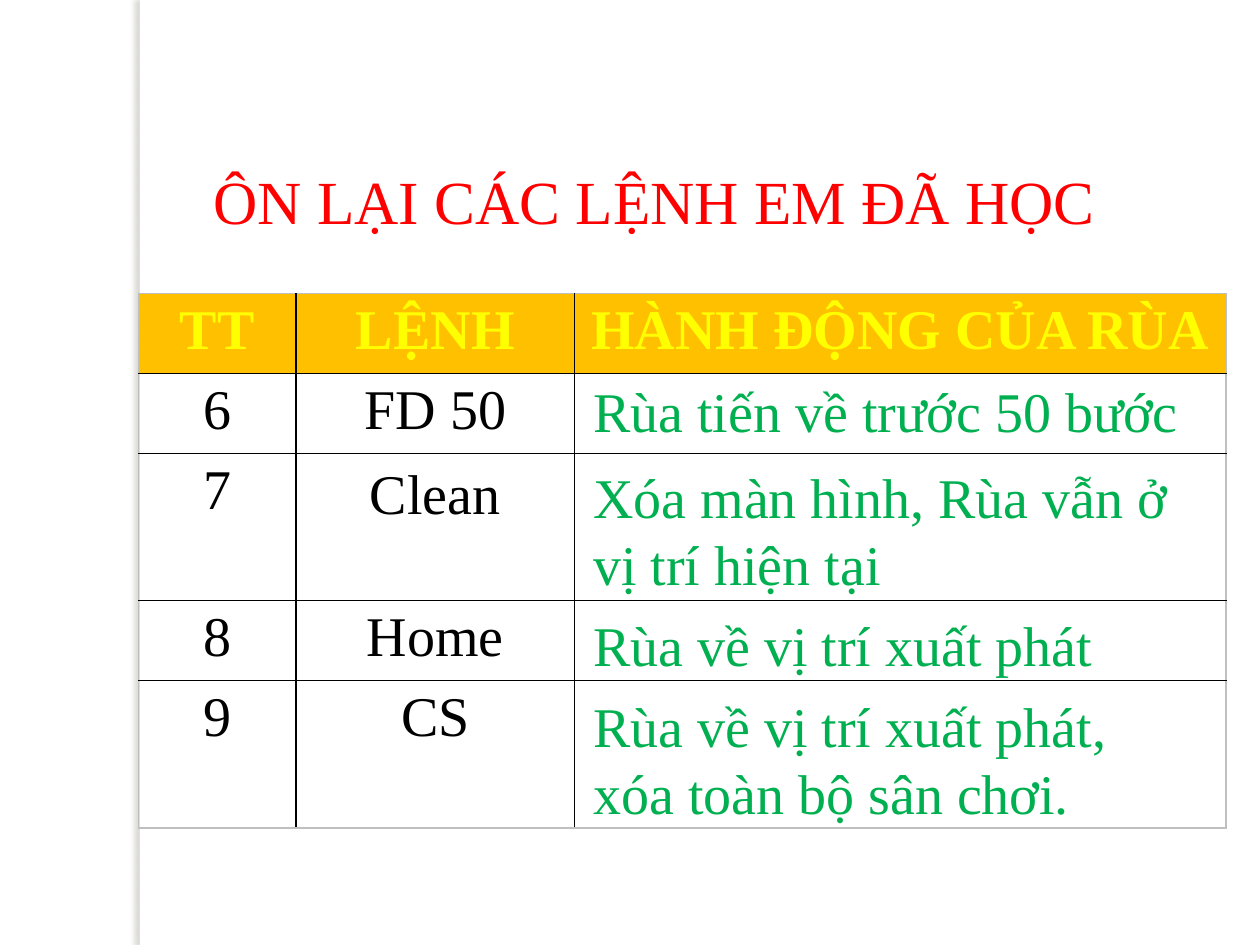
from lxml import etree
from pptx import Presentation
from pptx import util as u
from pptx.dml.color import RGBColor
from pptx.enum import shapes, text
from pptx.oxml import parse_xml
from pptx.oxml.ns import qn

FONT = "Times New Roman"
COLORS = {"paper": "FFFFFF", "title": "FF0000", "header": "FFC000", "header_text": "FFFF00",
          "ink": "000000", "action": "00B050", "frame": "BFBFBF", "shadow": "736F63"}
COLUMNS = [1.25, 2.21, 5.17]
ROWS = [0.63, 0.63, 1.17, 0.63, 1.17]
TABLE_LEFT, TABLE_TOP = 1.1, 2.33
COMMANDS = [("TT", "LỆNH", "HÀNH ĐỘNG CỦA RÙA"),
            ("6", "FD 50"), ("7", "Clean"), ("8", "Home"), ("9", "CS")]
# Action text, top and height of its box
ACTIONS = [("Rùa tiến về trước 50 bước", 2.94, 0.64),
           ("Xóa màn hình, Rùa vẫn ở vị trí hiện tại", 3.62, 1.18),
           ("Rùa về vị trí xuất phát", 4.8, 0.64),
           ("Rùa về vị trí xuất phát, xóa toàn bộ sân chơi.", 5.44, 1.18)]


def rgb(name):
    return RGBColor.from_string(COLORS[name])


def write(frame, words, size, color, align, bold=False):
    frame.text = words
    paragraph = frame.paragraphs[0]
    paragraph.alignment = align
    font = paragraph.runs[0].font
    font.name, font.size, font.bold = FONT, u.Pt(size), bold
    font.color.rgb = rgb(color)


def add_label(slide, words, box, size, color, align):
    label = slide.shapes.add_textbox(*map(u.Inches, box)).text_frame
    label.word_wrap = True
    write(label, words, size, color, align)


def add_side_strip(slide, width, height):
    strip = slide.shapes.add_shape(shapes.MSO_SHAPE.RECTANGLE, int(width * 0.111), 0,
                                   int(width * 0.008), height)
    strip.fill.solid()
    strip.fill.fore_color.rgb = rgb("paper")
    strip.line.fill.background()
    strip.shadow.inherit = False
    glow = strip.element.spPr.find(qn("a:effectLst"))
    glow.append(parse_xml(
        '<a:outerShdw xmlns:a="http://schemas.openxmlformats.org/drawingml/2006/main" '
        'blurRad="38100" dist="38100" dir="10800000" algn="tl" rotWithShape="0">'
        f'<a:srgbClr val="{COLORS["shadow"]}"><a:alpha val="25000"/></a:srgbClr></a:outerShdw>'))


def set_border(cell, side, color, width):
    line = etree.SubElement(cell._tc.get_or_add_tcPr(), qn(f"a:ln{side}"), w=str(u.Pt(width)))
    fill = etree.SubElement(line, qn("a:solidFill"))
    etree.SubElement(fill, qn("a:srgbClr"), val=COLORS[color])


def style_cell(cell, row, column):
    # Grey frame outside, black rules inside
    outer = {"L": column == 0, "R": column == len(COLUMNS) - 1,
             "T": row == 0, "B": row == len(ROWS) - 1}
    for side, is_outer in outer.items():
        set_border(cell, side, "frame" if is_outer else "ink", 1)
    if row == 0:
        cell.fill.solid()
        cell.fill.fore_color.rgb = rgb("header")
    else:
        cell.fill.background()


def add_command_table(slide):
    table = slide.shapes.add_table(
        len(ROWS), len(COLUMNS), u.Inches(TABLE_LEFT), u.Inches(TABLE_TOP),
        u.Inches(sum(COLUMNS)), u.Inches(sum(ROWS))).table
    for column, width in zip(table.columns, COLUMNS):
        column.width = u.Inches(width)
    for row, height in zip(table.rows, ROWS):
        row.height = u.Inches(height)
    for r in range(len(ROWS)):
        for c in range(len(COLUMNS)):
            style_cell(table.cell(r, c), r, c)
        for c, words in enumerate(COMMANDS[r]):
            write(table.cell(r, c).text_frame, words, 32, "ink" if r else "header_text",
                  text.PP_ALIGN.CENTER, bold=r == 0)
    # "Clean" sits slightly lower than its row number
    table.cell(2, 1).margin_top = u.Inches(0.09)


def main():
    deck = Presentation()
    deck.slide_width, deck.slide_height = u.Inches(10), u.Inches(7.5)
    slide = deck.slides.add_slide(deck.slide_layouts[6])
    add_side_strip(slide, deck.slide_width, deck.slide_height)
    # Title
    add_label(slide, "ÔN LẠI CÁC LỆNH EM ĐÃ HỌC", (1.17, 1.25, 8.05, 0.69), 35, "title",
              text.PP_ALIGN.CENTER)
    add_command_table(slide)
    # What the turtle does, over the last column
    for words, top, height in ACTIONS:
        add_label(slide, words, (4.61, top, 5, height), 32, "action", text.PP_ALIGN.LEFT)
    deck.save("out.pptx")


if __name__ == "__main__":
    main()
